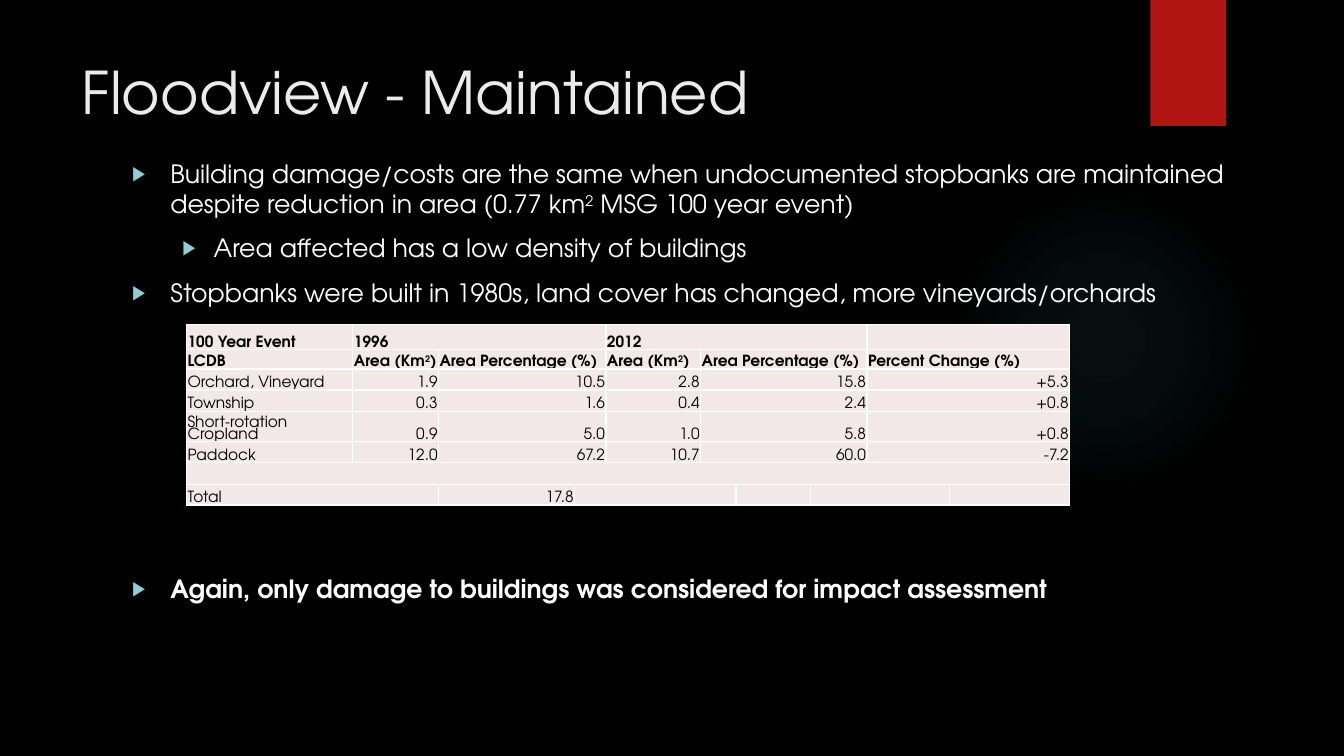
"""Build the Floodview slide: title, bullets and a land cover table."""
from dataclasses import dataclass

from lxml import etree
from pptx import Presentation
from pptx import util as u
from pptx.dml.color import RGBColor
from pptx.enum import shapes, text
from pptx.oxml import ns

FONT = "TeX Gyre Adventor"
COLORS = {
    "background": "000000", "title": "EBEBEB", "body": "FFFFFF",
    "bullet": "8AD0D6", "glow": "50B9C1", "tab": "B01513",
    "cell": "F2E8E7", "cell_text": "000000", "border": "FFFFFF",
}
COL_WIDTHS = [1.65, 0.85, 1.35, 0.31, 0.94, 0.35, 0.74, 0.56, 0.82, 1.19]
ROW_HEIGHTS = [0.25, 0.19, 0.21, 0.21, 0.3, 0.21, 0.22, 0.2]


@dataclass
class Bullet:
    text: str
    level: int = 0
    before: float = 10
    bold: bool = False


@dataclass
class Row:
    texts: list[str]
    spans: tuple[int, ...] = (1, 1, 2, 1, 3, 2)
    bold: bool = False


BULLETS = [
    Bullet("Building damage/costs are the same when undocumented stopbanks are "
           "maintained despite reduction in area (0.77 km^2^ MSG 100 year event)",
           before=0),
    Bullet("Area affected has a low density of buildings", level=1),
    Bullet("Stopbanks were built in 1980s, land cover has changed, "
           "more vineyards/orchards"),
    Bullet("Again, only damage to buildings was considered for impact assessment",
           before=190, bold=True),
]
INDENTS = [(0.38, -0.38), (0.81, -0.31)]
ROWS = [
    Row(["100 Year Event", "1996", "2012", ""], (1, 3, 4, 2), True),
    Row(["LCDB", "Area (Km^2^)", "Area Percentage (%)", "Area (Km^2^)",
         "Area Percentage (%)", "Percent Change (%)"], bold=True),
    Row(["Orchard, Vineyard", "1.9", "10.5", "2.8", "15.8", "+5.3"]),
    Row(["Township", "0.3", "1.6", "0.4", "2.4", "+0.8"]),
    Row(["Short-rotation Cropland", "0.9", "5.0", "1.0", "5.8", "+0.8"]),
    Row(["Paddock", "12.0", "67.2", "10.7", "60.0", "-7.2"]),
    Row([""], (10,)),
    Row(["Total", "17.8", "", "", "", ""], (2, 1, 3, 1, 2, 1)),
]


def rgb(name: str) -> RGBColor:
    """Look up a named colour."""
    return RGBColor.from_string(COLORS[name])


def sub(parent, tag: str, **attrs):
    """Append a DrawingML element."""
    return etree.SubElement(parent, ns.qn(f"a:{tag}"), attrs)


def add_runs(p, content: str, size: float, color: str, bold: bool = False) -> None:
    """Add formatted runs; text between carets is superscript."""
    for i, part in enumerate(content.split("^")):
        if not part:
            continue
        r = p.add_run()
        r.text = part
        r.font.name, r.font.size, r.font.bold = FONT, u.Pt(size), bold
        r.font.color.rgb = rgb(color)
        if i % 2:
            r.font._element.set("baseline", "30000")


def place(sp, left: float, top: float, width: float, height: float) -> None:
    """Move and size a shape."""
    sp.left, sp.top = u.Inches(left), u.Inches(top)
    sp.width, sp.height = u.Inches(width), u.Inches(height)


def prepare_frame(sp):
    """Return a top-anchored wrapping text frame of fixed size."""
    tf = sp.text_frame
    tf.word_wrap = True
    tf.auto_size = text.MSO_AUTO_SIZE.NONE
    tf.vertical_anchor = text.MSO_ANCHOR.TOP
    return tf


def add_backdrop(s, kind, left: float, top: float, width: float, height: float,
                 color: str, index: int):
    """Add a plain shape behind the placeholders."""
    sp = s.shapes.add_shape(kind, *map(u.Inches, (left, top, width, height)))
    sp.shadow.inherit = False
    sp.line.fill.background()
    sp.fill.solid()
    sp.fill.fore_color.rgb = rgb(color)
    s.shapes.element.insert(2 + index, sp.element)
    return sp


def make_glow(sp) -> None:
    """Replace the fill with a fading radial gradient."""
    solid = sp.element.spPr.find(ns.qn("a:solidFill"))
    grad = etree.Element(ns.qn("a:gradFill"))
    stops = sub(grad, "gsLst")
    for pos, alpha in ((0, 7), (36, 6), (69, 0), (100, 0)):
        stop = sub(stops, "gs", pos=str(pos * 1000))
        clr = sub(stop, "srgbClr", val=COLORS["glow"])
        sub(clr, "alpha", val=str(alpha * 1000))
    center = sub(grad, "path", path="circle")
    sub(center, "fillToRect", l="50000", t="50000", r="50000", b="50000")
    solid.getparent().replace(solid, grad)


def add_bullet(p, bullet: Bullet) -> None:
    """Write one bulleted paragraph."""
    margin, indent = INDENTS[bullet.level]
    p.level = bullet.level
    pPr = p._p.get_or_add_pPr()
    pPr.set("marL", str(u.Inches(margin)))
    pPr.set("indent", str(u.Inches(indent)))
    sub(sub(pPr, "buClr"), "srgbClr", val=COLORS["bullet"])
    sub(pPr, "buSzPct", val="80000")
    sub(pPr, "buFont", typeface="Arial")
    sub(pPr, "buChar", char="▶")
    p.space_before = u.Pt(bullet.before)
    add_runs(p, bullet.text, 18, "body", bullet.bold)


def format_cell(cell) -> None:
    """Set borders, fill, margins and spacing of a cell."""
    tcPr = cell._tc.get_or_add_tcPr()
    for side in ("lnL", "lnR", "lnT", "lnB"):
        ln = sub(tcPr, side, w=str(u.Pt(1)))
        sub(sub(ln, "solidFill"), "srgbClr", val=COLORS["border"])
    cell.fill.solid()
    cell.fill.fore_color.rgb = rgb("cell")
    cell.vertical_anchor = text.MSO_ANCHOR.BOTTOM
    cell.margin_left = cell.margin_right = cell.margin_top = u.Inches(0.01)
    cell.margin_bottom = 0
    cell.text_frame.paragraphs[0].line_spacing = 0.8


def add_land_cover_table(s) -> None:
    """Add the land cover table with its merged cells."""
    frame = s.shapes.add_table(
        len(ROWS), len(COL_WIDTHS), u.Inches(1.85), u.Inches(3.22),
        u.Inches(sum(COL_WIDTHS)), u.Inches(sum(ROW_HEIGHTS)))
    table = frame.table
    table.first_row = table.horz_banding = False
    for column, width in zip(table.columns, COL_WIDTHS):
        column.width = u.Inches(width)
    for table_row, height in zip(table.rows, ROW_HEIGHTS):
        table_row.height = u.Inches(height)
    for cell in table.iter_cells():
        format_cell(cell)
    for i, row in enumerate(ROWS):
        col = 0
        for content, span in zip(row.texts, row.spans):
            cell = table.cell(i, col)
            if span > 1:
                cell.merge(table.cell(i, col + span - 1))
            p = cell.text_frame.paragraphs[0]
            if col and not row.bold:
                p.alignment = text.PP_ALIGN.RIGHT
            add_runs(p, content, 11, "cell_text", row.bold)
            col += span
    for cell in table.iter_cells():
        if not cell.text_frame.text:
            sub(cell.text_frame.paragraphs[0]._p, "endParaRPr", sz="1100")


def main() -> None:
    """Build and save the slide."""
    prs = Presentation()
    prs.slide_width, prs.slide_height = u.Inches(13.33), u.Inches(7.5)
    s = prs.slides.add_slide(prs.slide_layouts[1])
    s.background.fill.solid()
    s.background.fill.fore_color.rgb = rgb("background")

    kinds = shapes.MSO_SHAPE
    make_glow(add_backdrop(s, kinds.OVAL, 9.41, 1.83, 3.08, 3.08, "glow", 0))
    add_backdrop(s, kinds.RECTANGLE, 11.41, 0, 0.75, 1.25, "tab", 1)

    title, body = s.shapes.title, s.placeholders[1]
    place(title, 0.71, 0.5, 10.29, 1.53)
    p = prepare_frame(title).paragraphs[0]
    p.alignment = text.PP_ALIGN.LEFT
    add_runs(p, "Floodview - Maintained", 42, "title")

    place(body, 1.21, 1.52, 11.42, 5.56)
    tf = prepare_frame(body)
    for i, bullet in enumerate(BULLETS):
        add_bullet(tf.add_paragraph() if i else tf.paragraphs[0], bullet)

    add_land_cover_table(s)
    prs.save("out.pptx")


if __name__ == "__main__":
    main()
